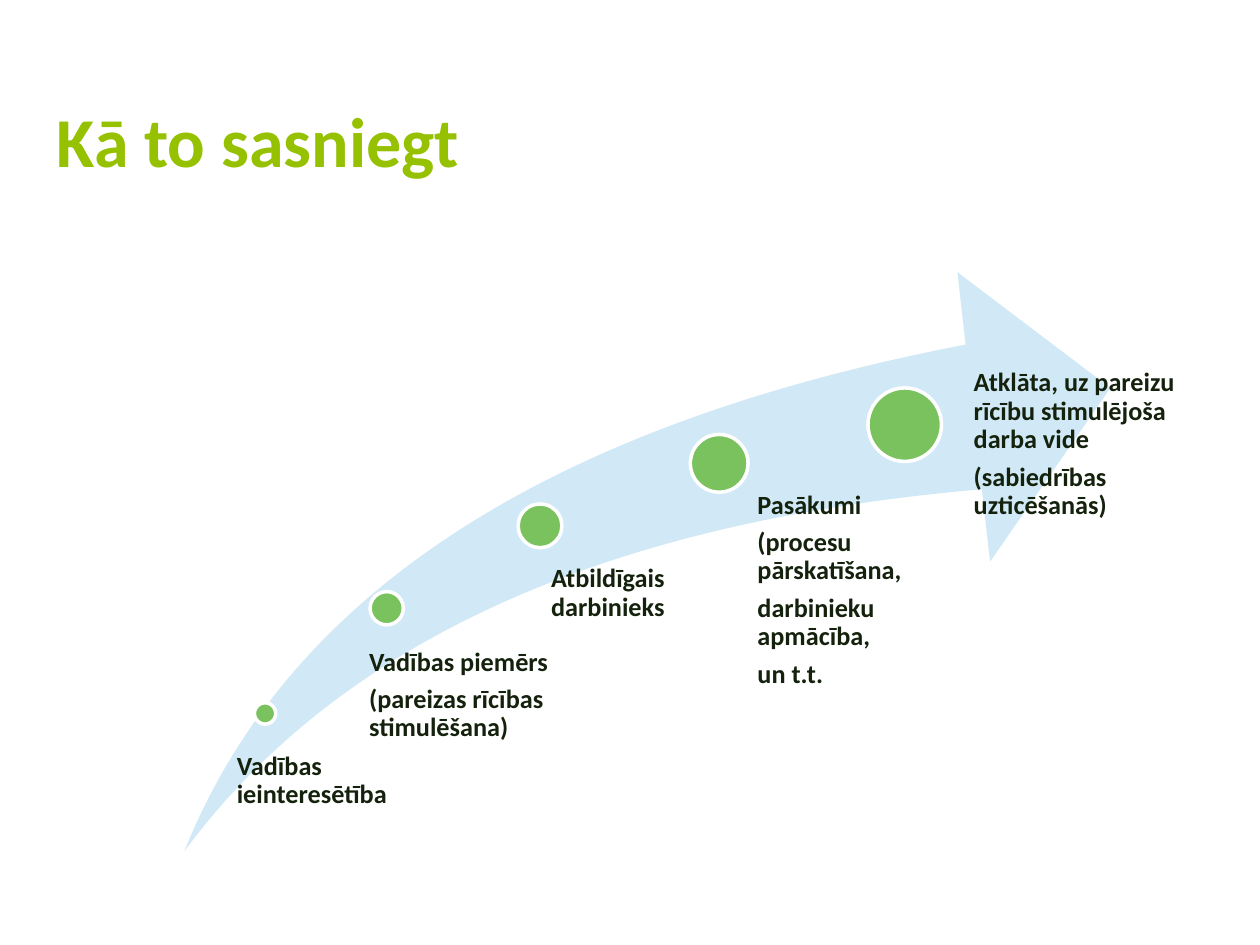
from dataclasses import dataclass

from pptx import Presentation
from pptx.dml.color import RGBColor
from pptx.enum.shapes import MSO_SHAPE
from pptx.enum.text import MSO_ANCHOR, MSO_AUTO_SIZE, PP_ALIGN
from pptx.util import Pt

COLORS = {
    "title": "95C100",
    "arrow": "D1E9F6",
    "marker": "7AC25D",
    "outline": "FFFFFF",
    "text": "14210C",
}
FONT = "Calibri"
INSET_PER_DIAMETER = 0.53


@dataclass
class Step:
    center: tuple
    diameter: float
    label_box: tuple
    lines: tuple


STEPS = [
    Step((151.5, 407.7), 12.2, (128.9, 430.2, 115.2, 55.8),
         ("Vadības ieinteresētība",)),
    Step((221, 347.6), 19, (200.9, 370.5, 128.9, 116.3),
         ("Vadības piemērs", "(pareizas rīcības stimulēšana)")),
    Step((308.6, 300.5), 25, (301.7, 323, 116.6, 163),
         ("Atbildīgais darbinieks",)),
    Step((411, 264.8), 33, (415.4, 280.8, 108, 122.4),
         ("Pasākumi", "(procesu pārskatīšana,", "darbinieku apmācība,", "un t.t.")),
    Step((517, 242.7), 42, (534.2, 211, 144, 106.6),
         ("Atklāta, uz pareizu rīcību stimulējoša darba vide",
          "(sabiedrības uzticēšanās)")),
]


def color(name):
    return RGBColor.from_string(COLORS[name])


def add_run(paragraph, text, size, color_name):
    run = paragraph.add_run()
    run.text = text
    run.font.name = FONT
    run.font.size = Pt(size)
    run.font.bold = True
    run.font.color.rgb = color(color_name)


def add_title(slide, text):
    title = slide.shapes.title
    title.left, title.top, title.width, title.height = map(Pt, (25.2, 21.6, 507.6, 116))
    frame = title.text_frame
    frame.auto_size = MSO_AUTO_SIZE.NONE
    frame.vertical_anchor = MSO_ANCHOR.MIDDLE
    paragraph = frame.paragraphs[0]
    paragraph.alignment = PP_ALIGN.LEFT
    add_run(paragraph, text, 40, "title")


def add_filled_shape(slide, kind, box, fill):
    shape = slide.shapes.add_shape(kind, *map(Pt, box))
    shape.shadow.inherit = False
    shape.fill.solid()
    shape.fill.fore_color.rgb = color(fill)
    shape.line.fill.background()
    return shape


def add_arrow(slide):
    arrow = add_filled_shape(slide, MSO_SHAPE.SWOOSH_ARROW, (105.3, 155.5, 529.2, 331), "arrow")
    arrow.adjustments[0] = 0.25
    arrow.adjustments[1] = 0.25


def add_marker(slide, center, diameter):
    left, top = (value - diameter / 2 for value in center)
    marker = add_filled_shape(slide, MSO_SHAPE.OVAL, (left, top, diameter, diameter), "marker")
    marker.line.color.rgb = color("outline")
    marker.line.width = Pt(2)


def add_label(slide, box, inset, lines):
    frame = slide.shapes.add_textbox(*map(Pt, box)).text_frame
    frame.word_wrap = True
    frame.margin_left = Pt(inset)
    frame.margin_top = frame.margin_right = frame.margin_bottom = 0
    for index, line in enumerate(lines):
        paragraph = frame.add_paragraph() if index else frame.paragraphs[0]
        paragraph.line_spacing = 0.9
        paragraph.space_after = Pt(5.25)
        add_run(paragraph, line, 15, "text")


def main():
    presentation = Presentation()
    presentation.slide_width = Pt(720)
    presentation.slide_height = Pt(540)
    slide = presentation.slides.add_slide(presentation.slide_layouts[5])
    add_title(slide, "Kā to sasniegt")
    add_arrow(slide)
    for step in STEPS:
        add_marker(slide, step.center, step.diameter)
        add_label(slide, step.label_box, step.diameter * INSET_PER_DIAMETER, step.lines)
    presentation.save("out.pptx")


if __name__ == "__main__":
    main()
